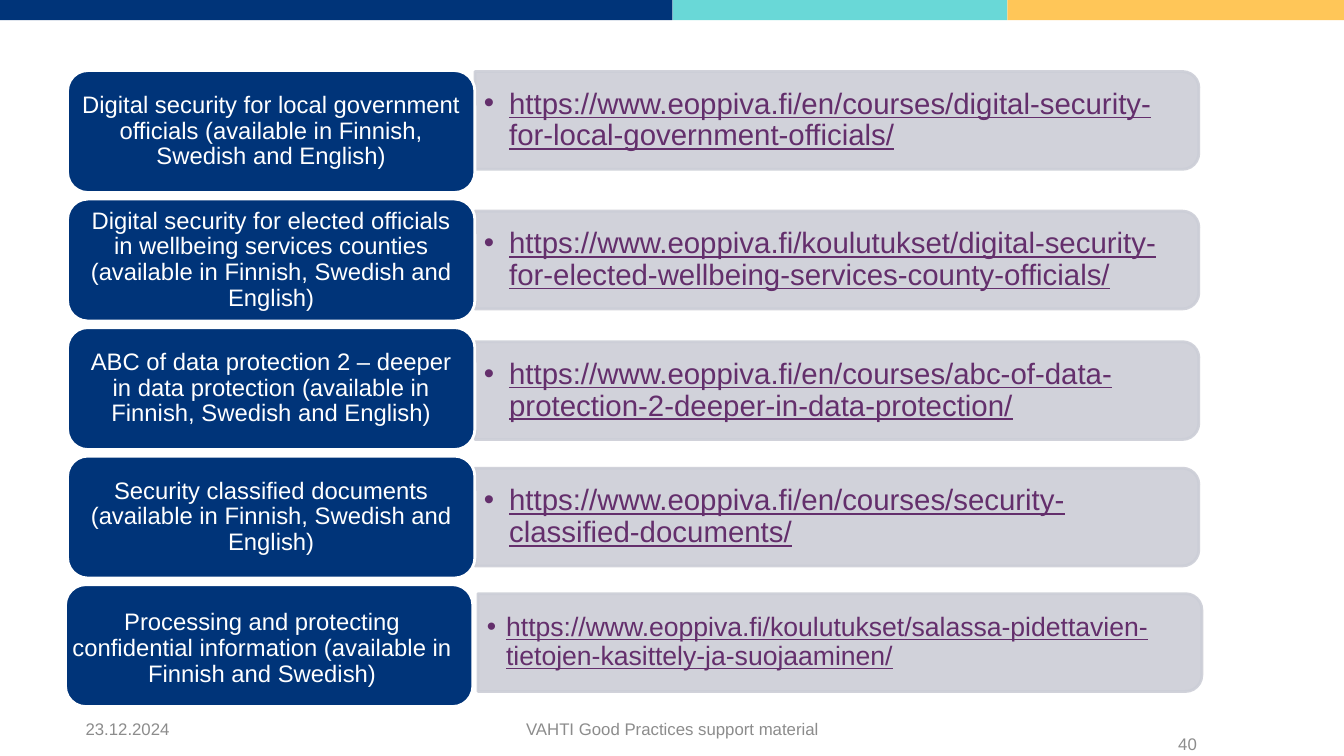
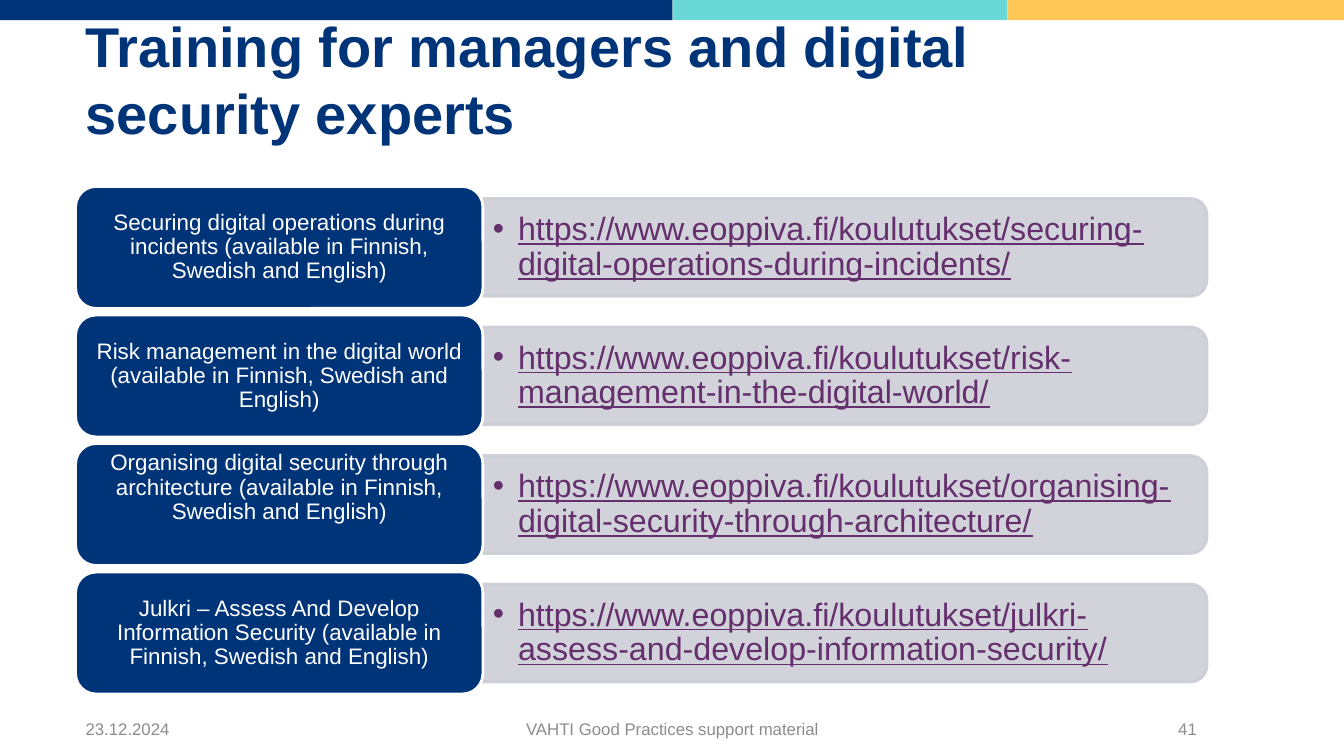
from pptx import Presentation
from pptx.dml.color import RGBColor
from pptx.enum.shapes import MSO_SHAPE as Shape
from pptx.enum.text import MSO_ANCHOR as Anchor, MSO_AUTO_SIZE as AutoSize, PP_ALIGN as Align
from pptx.oxml.ns import qn
from pptx.util import Inches, Pt
from lxml.etree import SubElement

COLORS = {"navy": "003479", "teal": "69D8D7", "amber": "FFC658", "panel": "CCCED7",
          "link": "642F6C", "gray": "8C8C8C", "white": "FFFFFF"}
FONT = "Arial"
LABEL_WIDTH, LABEL_HEIGHT, ROW_STEP = 4.04, 1.21, 1.275
PANEL_WIDTH, PANEL_HEIGHT = 7.18, 0.97
LINK_WIDTH, LINK_HEIGHT = 7.13, 0.88

COURSES = "https://www.eoppiva.fi/en/courses/"
TRAININGS = "https://www.eoppiva.fi/koulutukset/"
ALL_LANGUAGES = "(available in Finnish, Swedish and English)"

GENERAL_ROWS = [
    (f"Digital security for local government officials {ALL_LANGUAGES}",
     f"{COURSES}digital-security-for-local-government-officials/", {"panel_dy": -0.11}),
    (f"Digital security for elected officials in wellbeing services counties {ALL_LANGUAGES}",
     f"{TRAININGS}digital-security-for-elected-wellbeing-services-county-officials/", {}),
    (f"ABC of data protection 2 – deeper in data protection {ALL_LANGUAGES}",
     f"{COURSES}abc-of-data-protection-2-deeper-in-data-protection/", {"panel_dy": 0.02}),
    (f"Security classified documents {ALL_LANGUAGES}",
     f"{COURSES}security-classified-documents/", {}),
    ("Processing and protecting confidential information (available in Finnish and Swedish)",
     f"{TRAININGS}salassa-pidettavien-tietojen-kasittely-ja-suojaaminen/",
     {"panel_dy": -0.03, "label_dx": -0.02, "panel_dx": 0.03, "link_size": 19,
      "hang": 0.19, "label_insets": (0, 0.07, 0.14, 0.01)}),
]
EXPERT_ROWS = [
    (f"Securing digital operations during incidents {ALL_LANGUAGES}",
     f"{TRAININGS}securing-digital-operations-during-incidents/", {}),
    (f"Risk management in the digital world {ALL_LANGUAGES}",
     f"{TRAININGS}risk-management-in-the-digital-world/", {}),
    (f"Organising digital security through architecture {ALL_LANGUAGES}",
     f"{TRAININGS}organising-digital-security-through-architecture/",
     {"label_insets": (0.07, 0.03, 0.07, 0.36)}),
    (f"Julkri – Assess And Develop Information Security {ALL_LANGUAGES}",
     f"{TRAININGS}julkri-assess-and-develop-information-security/", {}),
]


def rgb(name):
    """Return the named palette colour."""
    return RGBColor.from_string(COLORS[name])


def write_text(box, text, *, size, color, bold=False, underline=False, align=Align.LEFT,
               anchor=Anchor.MIDDLE, insets=(0.1, 0.05, 0.1, 0.05), spacing=None, hang=None):
    """Fill a box with one formatted paragraph, bulleted when hang is given."""
    frame = box.text_frame
    frame.word_wrap = True
    frame.auto_size = AutoSize.NONE
    frame.vertical_anchor = anchor
    (frame.margin_left, frame.margin_top,
     frame.margin_right, frame.margin_bottom) = map(Inches, insets)
    para = frame.paragraphs[0]
    para.alignment = align
    if spacing:
        para.line_spacing = spacing
    if hang:
        props = para._p.get_or_add_pPr()
        props.set("marL", str(Inches(hang)))
        props.set("indent", str(-Inches(hang)))
        SubElement(props, qn("a:buFont"), typeface=FONT)
        SubElement(props, qn("a:buChar"), char="•")
    span = para.add_run()
    span.text = text
    font = span.font
    font.name, font.size, font.bold, font.underline = FONT, Pt(size), bold, underline
    font.color.rgb = rgb(color)


def add_text(page, text, left, top, width, height, **style):
    """Add a text box with formatted text."""
    box = page.shapes.add_textbox(Inches(left), Inches(top), Inches(width), Inches(height))
    write_text(box, text, **style)


def add_block(page, kind, left, top, width, height, *, fill, line=None):
    """Add a flat filled shape, outlined when a line colour is given."""
    block = page.shapes.add_shape(kind, Inches(left), Inches(top), Inches(width), Inches(height))
    block.shadow.inherit = False
    block.fill.solid()
    block.fill.fore_color.rgb = rgb(fill)
    if line:
        block.line.color.rgb = rgb(line)
        block.line.width = Pt(2)
    else:
        block.line.fill.background()
    return block


def add_panel(page, left, middle):
    """Add a translucent panel rounded on its right side."""
    panel = add_block(page, Shape.ROUND_2_SAME_RECTANGLE,
                      left + (PANEL_WIDTH - PANEL_HEIGHT) / 2, middle - PANEL_WIDTH / 2,
                      PANEL_HEIGHT, PANEL_WIDTH, fill="panel", line="panel")
    panel.rotation = 90
    for color in panel._element.spPr.iter(qn("a:srgbClr")):
        SubElement(color, qn("a:alpha"), val="90000")


def add_course(page, label, link, left, top, *, label_size, link_size, label_insets, link_insets,
               hang=0.25, label_dx=0, panel_dx=0, panel_dy=0):
    """Add one row: a course label and a panel with its address."""
    panel_left = left + LABEL_WIDTH + panel_dx
    middle = top + LABEL_HEIGHT / 2 + panel_dy
    add_panel(page, panel_left, middle)
    add_text(page, link, panel_left, middle - LINK_HEIGHT / 2, LINK_WIDTH, LINK_HEIGHT,
             size=link_size, color="link", underline=True, insets=link_insets,
             spacing=0.9, hang=hang)
    block = add_block(page, Shape.ROUNDED_RECTANGLE, left + label_dx, top,
                      LABEL_WIDTH, LABEL_HEIGHT, fill="navy", line="white")
    write_text(block, label, size=label_size, color="white", align=Align.CENTER,
               insets=label_insets, spacing=0.9)


def add_courses(page, rows, left, top, **style):
    """Stack course rows at an equal step."""
    for index, (label, link, changes) in enumerate(rows):
        add_course(page, label, link, left, top + index * ROW_STEP, **{**style, **changes})


def add_frame(page, number, number_top=7.11):
    """Add the top band and the footer."""
    for color, left, width in (("amber", 9.99, 3.35), ("teal", 6.67, 3.32), ("navy", 0, 6.67)):
        add_block(page, Shape.RECTANGLE, left, 0, width, 0.2, fill=color)
    for text, left, top, width, align in (
            ("23.12.2024", 0.75, 7.11, 1.65, Align.LEFT),
            ("VAHTI Good Practices support material", 3.49, 7.11, 6.36, Align.CENTER),
            (number, 11.06, number_top, 0.91, Align.RIGHT)):
        add_text(page, text, left, top, width, 0.24, size=12, color="gray", align=align)


def set_title(page, text):
    """Place and format the title placeholder."""
    title = page.shapes.title
    title.left, title.top, title.width, title.height = map(Inches, (0.75, 0.16, 11.22, 1.34))
    write_text(title, text, size=40, color="navy", bold=True, anchor=Anchor.BOTTOM)


def main():
    """Build and save the deck."""
    deck = Presentation()
    deck.slide_width, deck.slide_height = Inches(13.33), Inches(7.5)
    title_only, blank = deck.slide_layouts[5], deck.slide_layouts[6]

    page = deck.slides.add_slide(blank)
    add_frame(page, "40", number_top=7.26)
    add_courses(page, GENERAL_ROWS, 0.67, 0.7, label_size=17, link_size=21,
                label_insets=(0.07, 0.04, 0.07, 0.04), link_insets=(0.09, 0.04, 0.09, 0.04))

    page = deck.slides.add_slide(title_only)
    add_frame(page, "41")
    set_title(page, "Training for managers and digital security experts")
    add_courses(page, EXPERT_ROWS, 0.75, 1.85, label_size=16, link_size=23,
                label_insets=(0.07, 0.03, 0.07, 0.03), link_insets=(0.1, 0.05, 0.1, 0.05))

    deck.save("out.pptx")


if __name__ == "__main__":
    main()
